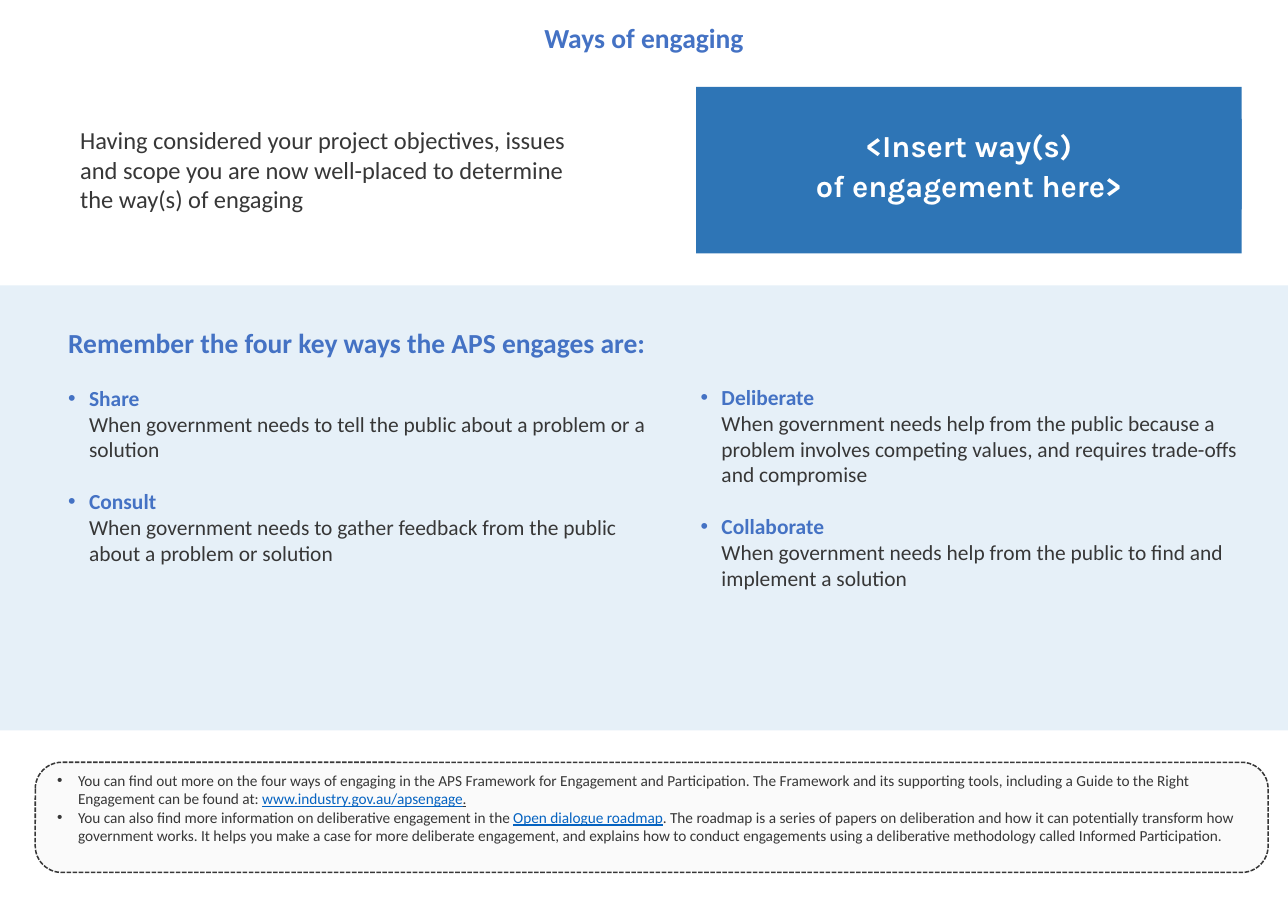
from dataclasses import dataclass, field
from typing import Optional

from lxml import etree
from pptx import Presentation
from pptx import util as u
from pptx.dml.color import RGBColor
from pptx.enum import dml, shapes, text
from pptx.oxml.ns import qn

BLUE = RGBColor(0x44, 0x72, 0xC4)
PANEL_BLUE = RGBColor(0x2E, 0x75, 0xB6)
BAND_BLUE = RGBColor(0x5B, 0x9B, 0xD5)
LINK_BLUE = RGBColor(0x05, 0x63, 0xC1)
INK = RGBColor(0x37, 0x37, 0x37)
PALE_GREY = RGBColor(0xF2, 0xF2, 0xF2)
WHITE = RGBColor(0xFF, 0xFF, 0xFF)

SLIDE_WIDTH = u.Inches(11.69)
SLIDE_HEIGHT = u.Inches(8.27)
BULLET_INDENT = u.Inches(0.19)
ITEM_GAP = u.Pt(17)


@dataclass(frozen=True)
class Area:
    """Left, top, width and height in percent of the slide."""
    left: float
    top: float
    width: float
    height: float

    def lengths(self) -> tuple[int, int, int, int]:
        return (round(SLIDE_WIDTH * self.left / 100), round(SLIDE_HEIGHT * self.top / 100),
                round(SLIDE_WIDTH * self.width / 100), round(SLIDE_HEIGHT * self.height / 100))


@dataclass(frozen=True)
class Span:
    words: str
    color: RGBColor = INK
    bold: bool = False
    underline: bool = False


@dataclass(frozen=True)
class Block:
    spans: list[Span]
    size: float
    font: str = "Calibri"
    bullet: bool = False
    format: dict = field(default_factory=dict)


@dataclass(frozen=True)
class Panel:
    area: Area
    fill: RGBColor
    opacity: int = 100
    kind: shapes.MSO_SHAPE = shapes.MSO_SHAPE.RECTANGLE
    corner: Optional[float] = None
    dashed: bool = False


def apply_format(target, values: dict) -> None:
    for name, value in values.items():
        setattr(target, name, value)


def add_panel(slide, panel: Panel):
    shape = slide.shapes.add_shape(panel.kind, *panel.area.lengths())
    shape.shadow.inherit = False
    shape.fill.solid()
    shape.fill.fore_color.rgb = panel.fill
    if panel.opacity < 100:
        color = shape.fill._xPr.find(qn("a:solidFill"))[0]
        etree.SubElement(color, qn("a:alpha"), val=str(panel.opacity * 1000))
    if panel.corner is not None:
        shape.adjustments[0] = panel.corner
    if panel.dashed:
        shape.line.color.rgb = INK
        apply_format(shape.line, {"width": u.Pt(1), "dash_style": dml.MSO_LINE.SQUARE_DOT})
    else:
        shape.line.fill.background()
    return shape


def add_bullet(paragraph) -> None:
    properties = paragraph._p.get_or_add_pPr()
    properties.set("marL", str(BULLET_INDENT))
    properties.set("indent", str(-BULLET_INDENT))
    etree.SubElement(properties, qn("a:buFont"), typeface="Arial")
    etree.SubElement(properties, qn("a:buChar"), char="•")


def write_blocks(shape, blocks: list[Block]) -> None:
    frame = shape.text_frame
    frame.word_wrap = True
    for index, block in enumerate(blocks):
        paragraph = frame.add_paragraph() if index else frame.paragraphs[0]
        apply_format(paragraph, block.format)
        if block.bullet:
            add_bullet(paragraph)
        for span in block.spans:
            for line_number, line in enumerate(span.words.split("\n")):
                if line_number:
                    paragraph.add_line_break()
                if line:
                    run = paragraph.add_run()
                    run.text = line
                    apply_format(run.font, {"name": block.font, "size": u.Pt(block.size),
                                            "bold": span.bold, "underline": span.underline})
                    run.font.color.rgb = span.color


def add_text(slide, area: Area, blocks: list[Block]) -> None:
    write_blocks(slide.shapes.add_textbox(*area.lengths()), blocks)


def way(name: str, meaning: str, gap: int = ITEM_GAP) -> Block:
    return Block([Span(name + "\n", BLUE, bold=True), Span(meaning)], 14,
                 bullet=True, format={"space_before": gap})


def note(before: str, link: str, after: Span) -> Block:
    return Block([Span(before), Span(link, LINK_BLUE, underline=True), after], 10, bullet=True)


CENTERED = {"alignment": text.PP_ALIGN.CENTER, "line_spacing": 1.07, "space_after": u.Pt(8)}

BAND = Panel(Area(0, 31.32, 100, 48.85), BAND_BLUE, opacity=15)
ANSWER_PANEL = Panel(Area(54.06, 9.55, 42.34, 18.26), PANEL_BLUE)
ANSWER_CAPTION = Panel(Area(54.06, 13.06, 42.34, 9.92), PANEL_BLUE)
NOTE_BOX = Panel(Area(2.74, 83.68, 95.72, 12.09), PALE_GREY, opacity=35,
                 kind=shapes.MSO_SHAPE.ROUNDED_RECTANGLE, corner=0.24, dashed=True)

TITLE = [Block([Span("Ways of engaging", BLUE, bold=True)], 18, format=CENTERED)]
ANSWER = [Block([Span("<Insert way(s)\nof engagement here>", WHITE, bold=True)], 20,
                font="Karla", format=CENTERED)]
INTRO = [Block([Span("Having considered your project objectives, issues and scope you are now "
                     "well-placed to determine the way(s) of engaging")], 16)]
LEFT_WAYS = [
    Block([Span("Remember the four key ways the APS engages are:", BLUE, bold=True)], 18),
    way("Share", "When government needs to tell the public about a problem or a solution"),
    way("Consult", "When government needs to gather feedback from the public about a problem "
                   "or solution"),
]
RIGHT_WAYS = [
    way("Deliberate", "When government needs help from the public because a problem involves "
                      "competing values, and requires trade-offs and compromise", gap=0),
    way("Collaborate", "When government needs help from the public to find and implement "
                       "a solution"),
]
NOTES = [
    note("You can find out more on the four ways of engaging in the APS Framework for Engagement "
         "and Participation. The Framework and its supporting tools, including a Guide to the "
         "Right Engagement can be found at: ",
         "www.industry.gov.au/apsengage", Span(".", underline=True)),
    note("You can also find more information on deliberative engagement in the ",
         "Open dialogue roadmap",
         Span(". The roadmap is a series of papers on deliberation and how it can potentially "
              "transform how government works. It helps you make a case for more deliberate "
              "engagement, and explains how to conduct engagements using a deliberative "
              "methodology called Informed Participation.")),
]


def main() -> None:
    presentation = Presentation()
    apply_format(presentation, {"slide_width": SLIDE_WIDTH, "slide_height": SLIDE_HEIGHT})
    slide = presentation.slides.add_slide(presentation.slide_layouts[6])

    add_panel(slide, BAND)
    add_text(slide, Area(0, 1.45, 100, 5.2), TITLE)
    add_panel(slide, ANSWER_PANEL)
    caption = add_panel(slide, ANSWER_CAPTION)
    caption.text_frame.vertical_anchor = text.MSO_ANCHOR.MIDDLE
    write_blocks(caption, ANSWER)
    add_text(slide, Area(4.45, 35.19, 47.13, 27.69), LEFT_WAYS)
    add_text(slide, Area(5.39, 13.18, 42.17, 11), INTRO)
    add_text(slide, Area(53.55, 41.6, 45.94, 24.06), RIGHT_WAYS)
    add_panel(slide, NOTE_BOX)
    add_text(slide, Area(3.59, 84.04, 94.78, 9.31), NOTES)

    presentation.save("out.pptx")


if __name__ == "__main__":
    main()
